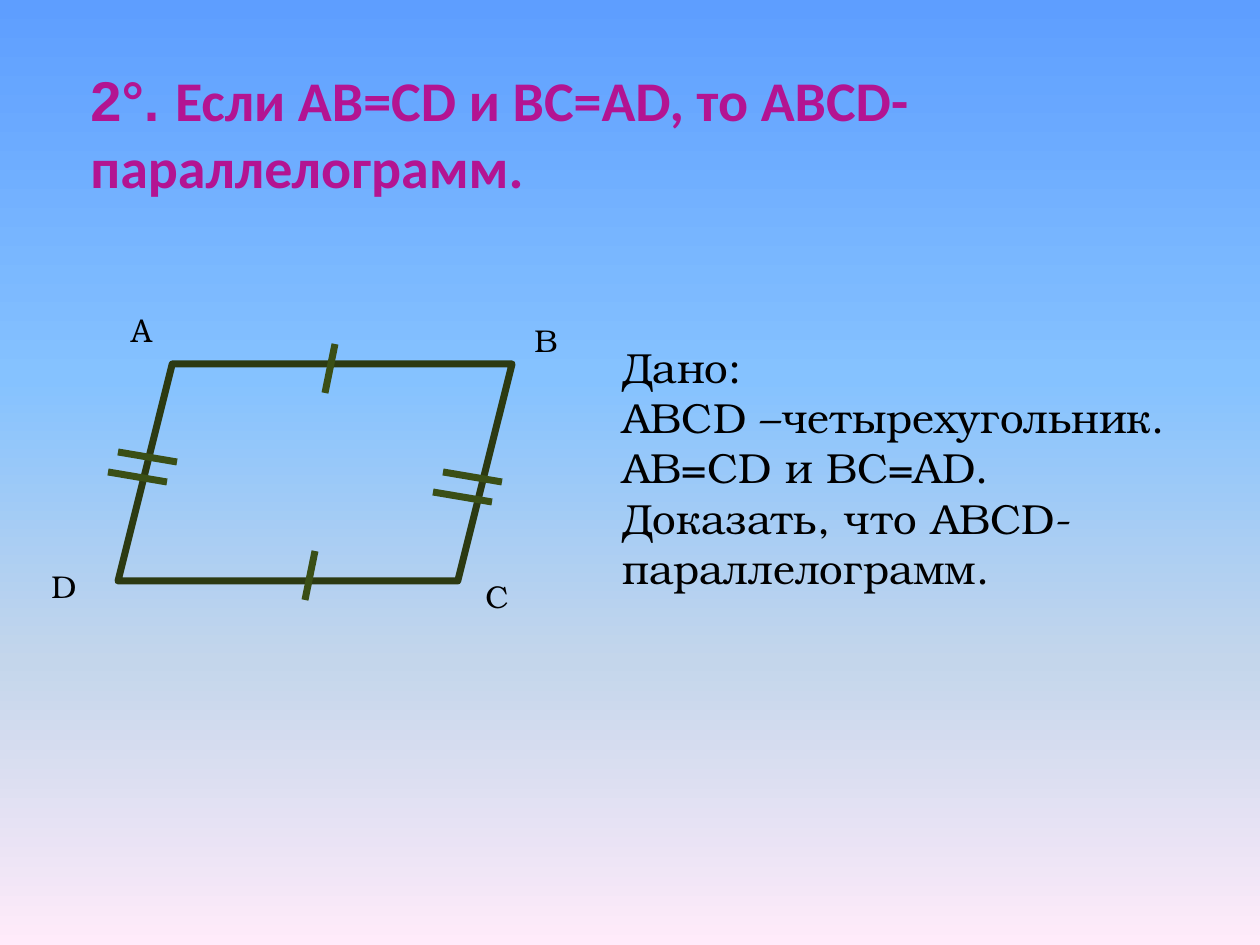
from pptx import Presentation
from pptx import util as u
from pptx.dml.color import RGBColor
from pptx.enum import shapes, text
from pptx.oxml import parse_xml
from pptx.oxml.ns import nsdecls, qn

PX = u.Inches(1) / 126
MAGENTA = RGBColor(0xB3, 0x14, 0x92)
BLACK = RGBColor(0x00, 0x00, 0x00)
DARK_OLIVE = RGBColor(0x2C, 0x3A, 0x12)
OLIVE = RGBColor(0x3A, 0x4F, 0x16)
SKY_STOPS = [
    (0, RGBColor(0x5E, 0x9E, 0xFF)),
    (40, RGBColor(0x85, 0xC2, 0xFF)),
    (70, RGBColor(0xC4, 0xD6, 0xEB)),
    (100, RGBColor(0xFF, 0xEB, 0xFA)),
]
SERIF = "TeX Gyre Bonum"


def emu(*lengths):
    """Turn px lengths into EMU."""
    return [round(length * PX) for length in lengths]


def add_text(box, lines, size, font, color):
    """Add a text box with one paragraph per line and return its text frame."""
    frame = slide.shapes.add_textbox(*emu(*box)).text_frame
    frame.word_wrap = True
    frame.text = "\n".join(lines)
    for paragraph in frame.paragraphs:
        for run in paragraph.runs:
            run.font.size = u.Pt(size)
            run.font.name = font
            run.font.color.rgb = color
    return frame


presentation = Presentation()
presentation.slide_width, presentation.slide_height = emu(1260, 945)
slide = presentation.slides.add_slide(presentation.slide_layouts[6])

# Sky gradient, running from top to bottom
background = slide.background.fill
background.gradient()
background.gradient_angle = 270
stop_list = slide.element.find(".//" + qn("a:gsLst"))
for stop in list(stop_list):
    stop_list.remove(stop)
for percent, color in SKY_STOPS:
    stop_list.append(parse_xml(
        f'<a:gs {nsdecls("a")} pos="{percent * 1000}"><a:srgbClr val="{color}"/></a:gs>'))

# Title: the number has its own font
title = add_text((78, 59, 1075, 217), ["2°. "], 32, "Arial", MAGENTA)
title.vertical_anchor = text.MSO_ANCHOR.TOP
statement = title.paragraphs[0].add_run()
statement.text = "Если AB=CD и BC=AD, то ABCD-параллелограмм."
statement.font.size = u.Pt(32)
statement.font.name = "Calibri"
statement.font.color.rgb = MAGENTA
for run in title.paragraphs[0].runs:
    run.font.bold = True

# Parallelogram and its vertices
parallelogram = slide.shapes.add_shape(
    shapes.MSO_SHAPE.PARALLELOGRAM, *emu(118, 364, 394, 217))
parallelogram.shadow.inherit = False
parallelogram.fill.background()
parallelogram.line.color.rgb = DARK_OLIVE
parallelogram.line.width = u.Pt(4)

for letter, left, top, width, font in [
    ("А", 118, 305, 39, "Cambria"),
    ("B", 522, 315, 39, SERIF),
    ("C", 473, 571, 39, SERIF),
    ("D", 39, 561, 71, SERIF),
]:
    add_text((left, top, width, 50), [letter], 18, font, BLACK)

add_text((610, 335, 620, 267), [
    "Дано:",
    "ABCD –четырехугольник. AB=CD и BC=AD.",
    "Доказать, что ABCD-параллелограмм.",
], 24, SERIF, BLACK)

# Equality marks: double on the slanted sides, single on the level ones
double_marks = [(left - 10 * i, top + 20 * i, 59, 10)
                for left, top in [(118, 452), (443, 472)] for i in range(2)]
single_marks = [(335, 344, -10, 49), (315, 551, -10, 49)]
for x, y, dx, dy in double_marks + single_marks:
    mark = slide.shapes.add_connector(
        shapes.MSO_CONNECTOR.STRAIGHT, *emu(x, y, x + dx, y + dy))
    mark.line.color.rgb = OLIVE
    mark.line.width = u.Pt(4)
    mark.element.spPr.append(parse_xml(f'<a:effectLst {nsdecls("a")}/>'))

presentation.save("out.pptx")
